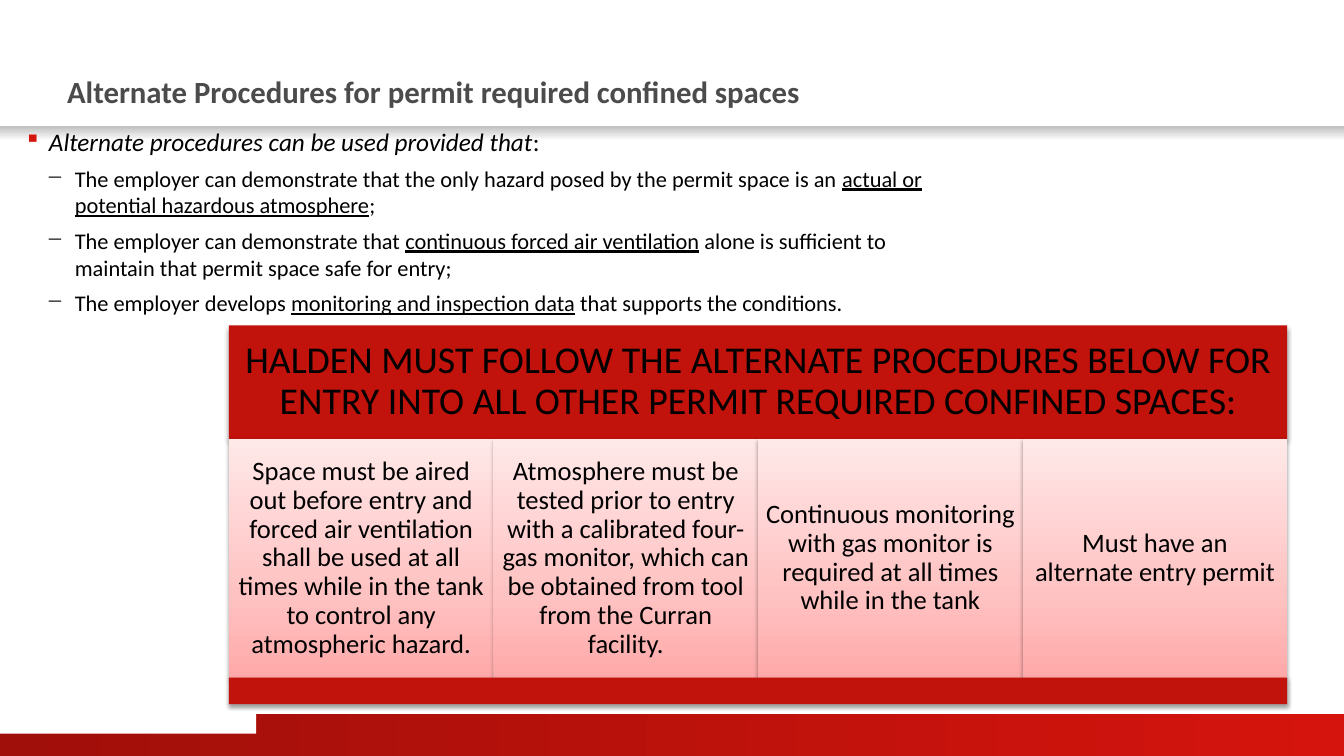
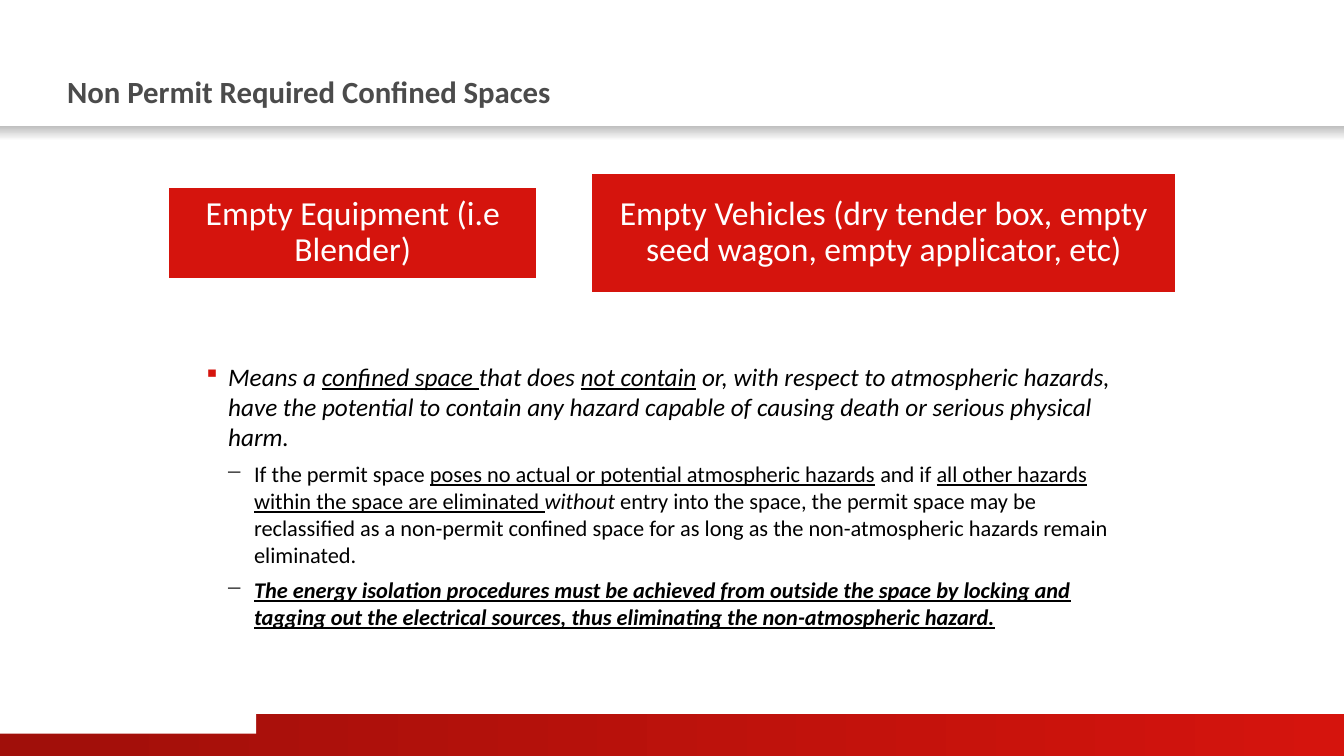
"""Build two slides on entry rules for confined spaces."""
from dataclasses import dataclass
from typing import Optional

from lxml.etree import SubElement as Sub
from pptx import Presentation
from pptx.dml.color import RGBColor as RGB
from pptx.enum.shapes import MSO_SHAPE as Form
from pptx.enum.text import MSO_ANCHOR as Anchor, PP_ALIGN as Align
from pptx.oxml.ns import qn
from pptx.util import Pt

FONT = "Calibri"
WIDE, HIGH = 960, 540
BLACK = RGB(0x00, 0x00, 0x00)
WHITE = RGB(0xFF, 0xFF, 0xFF)
GREY = RGB(0x4B, 0x4B, 0x4B)
SILVER = RGB(0xBE, 0xBE, 0xBE)
RED = RGB(0xD5, 0x14, 0x0D)
BRICK = RGB(0xC1, 0x12, 0x0C)
DARK = RGB(0xA0, 0x0F, 0x0A)
ROSE = RGB(0xFF, 0xA9, 0xA9)
PINK = RGB(0xFF, 0xC2, 0xC2)
BLUSH = RGB(0xFF, 0xE8, 0xE8)


@dataclass
class Area:
    x: float
    y: float
    w: float
    h: float


@dataclass
class Blend:
    stops: list[tuple[int, RGB]]
    angle: int


@dataclass
class Run:
    text: str
    style: str = ""


@dataclass
class Level:
    size: int
    left: float
    hang: float
    mark: str
    tint: RGB
    scale: int


@dataclass
class Item:
    level: int
    runs: list[Run]


@dataclass
class Label:
    text: str
    size: int
    color: RGB
    pad: float


LEVELS = [
    Level(18, 17.5, 17.5, "▪", RED, 90),
    Level(16, 36, 18.5, "–", GREY, 100),
]
FOOT = Blend([(0, DARK), (100, RED)], 0)
SHADE = Blend([(0, SILVER), (100, WHITE)], 90)
CELL = Blend([(0, ROSE), (35, PINK), (100, BLUSH)], 270)

RULES = [
    Item(0, [Run("Alternate procedures can be used provided that", "i"), Run(":")]),
    Item(1, [
        Run("The employer can demonstrate that the only hazard posed by the permit space is an "),
        Run("actual or potential hazardous atmosphere", "u"),
        Run(";"),
    ]),
    Item(1, [
        Run("The employer can demonstrate that "),
        Run("continuous forced air ventilation", "u"),
        Run(" alone is sufficient to maintain that permit space safe for entry;"),
    ]),
    Item(1, [
        Run("The employer develops "),
        Run("monitoring and inspection data", "u"),
        Run(" that supports the conditions."),
    ]),
]
BANNER = ("HALDEN MUST FOLLOW THE ALTERNATE PROCEDURES BELOW FOR ENTRY INTO "
          "ALL OTHER PERMIT REQUIRED CONFINED SPACES:")
STEPS = [
    "Space must be aired out before entry and forced air ventilation shall be used "
    "at all times while in the tank to control any atmospheric hazard.",
    "Atmosphere must be tested prior to entry with a calibrated four-gas monitor, "
    "which can be obtained from tool from the Curran facility.",
    "Continuous monitoring with gas monitor is required at all times while in the tank",
    "Must have an alternate entry permit",
]
MEANING = [
    Item(0, [
        Run("Means a ", "i"),
        Run("confined space ", "iu"),
        Run("that does ", "i"),
        Run("not contain", "iu"),
        Run(" or, with respect to atmospheric hazards, have the potential to contain "
            "any hazard capable of causing death or serious physical harm.", "i"),
    ]),
    Item(1, [
        Run("If the permit space "),
        Run("poses no actual or potential atmospheric hazards", "u"),
        Run(" and if "),
        Run("all other hazards within the space are eliminated ", "u"),
        Run("without", "i"),
        Run(" entry into the space, the permit space may be reclassified as a non-permit "
            "confined space for as long as the non-atmospheric hazards remain eliminated."),
    ]),
    Item(1, [
        Run("The energy isolation procedures must be achieved from outside the space by "
            "locking and tagging out the electrical sources, thus eliminating the "
            "non-atmospheric hazard.", "biu"),
    ]),
]
CASES = [
    (Area(120, 133, 264, 66.5), "Empty Equipment (i.e Blender)"),
    (Area(422, 123, 418.5, 86.5),
     "Empty Vehicles (dry tender box, empty seed wagon, empty applicator, etc)"),
]


def bounds(area: Area) -> list[int]:
    return [Pt(n) for n in (area.x, area.y, area.w, area.h)]


def set_frame(frame, anchor, pads: tuple) -> None:
    frame.word_wrap = True
    frame.vertical_anchor = anchor
    (frame.margin_left, frame.margin_top,
     frame.margin_right, frame.margin_bottom) = [Pt(n) for n in pads]


def add_run(par, run: Run, size: int, color: RGB) -> None:
    part = par.add_run()
    part.text = run.text
    font = part.font
    font.name, font.size = FONT, Pt(size)
    font.color.rgb = color
    font.bold, font.italic = "b" in run.style, "i" in run.style
    font.underline = "u" in run.style


def add_blend(props, blend: Blend) -> None:
    grad = props.makeelement(qn("a:gradFill"), {"rotWithShape": "1"})
    stops = Sub(grad, qn("a:gsLst"))
    for place, color in blend.stops:
        stop = Sub(stops, qn("a:gs"), pos=str(place * 1000))
        Sub(stop, qn("a:srgbClr"), val=str(color))
    Sub(grad, qn("a:lin"), ang=str(blend.angle * 60000), scaled="0")
    props.find(qn("a:prstGeom")).addnext(grad)


def add_shadow(props) -> None:
    cast = Sub(props.find(qn("a:effectLst")), qn("a:outerShdw"), blurRad=str(Pt(3.1)),
               dist=str(Pt(1.6)), dir="5400000", rotWithShape="0")
    tint = Sub(cast, qn("a:srgbClr"), val=str(BLACK))
    Sub(tint, qn("a:alpha"), val="38000")


def add_box(slide, area: Area, fill: RGB | Blend, label: Optional[Label] = None,
            edge: Optional[RGB] = None, raised: bool = False) -> None:
    box = slide.shapes.add_shape(Form.RECTANGLE, *bounds(area))
    box.shadow.inherit = False
    props = box.element.spPr
    if isinstance(fill, Blend):
        add_blend(props, fill)
    else:
        box.fill.solid()
        box.fill.fore_color.rgb = fill
    if edge is None:
        box.line.fill.background()
    else:
        box.line.color.rgb = edge
        box.line.width = Pt(2)
    if raised:
        add_shadow(props)
    if label:
        frame = box.text_frame
        set_frame(frame, Anchor.MIDDLE, (label.pad,) * 4)
        par = frame.paragraphs[0]
        par.alignment, par.line_spacing = Align.CENTER, 0.9
        add_run(par, Run(label.text), label.size, label.color)


def add_list(slide, area: Area, items: list[Item]) -> None:
    frame = slide.shapes.add_textbox(*bounds(area)).text_frame
    set_frame(frame, Anchor.TOP, (0, 0, 0, 0))
    for num, item in enumerate(items):
        par = frame.add_paragraph() if num else frame.paragraphs[0]
        level = LEVELS[item.level]
        par.level = item.level
        par.space_before = Pt(6 if num else 0)
        props = par._p.get_or_add_pPr()
        props.set("marL", str(Pt(level.left)))
        props.set("indent", str(-Pt(level.hang)))
        Sub(Sub(props, qn("a:buClr")), qn("a:srgbClr"), val=str(level.tint))
        Sub(props, qn("a:buSzPct"), val=str(level.scale * 1000))
        Sub(props, qn("a:buChar"), char=level.mark)
        for run in item.runs:
            add_run(par, run, level.size, BLACK)


def add_slide(deck, title: str):
    slide = deck.slides.add_slide(deck.slide_layouts[6])
    add_box(slide, Area(0, 510, WIDE, 30), FOOT)
    add_box(slide, Area(0, 488, 183, 36), WHITE)
    add_box(slide, Area(0, 90, WIDE, 10.5), SHADE)
    frame = slide.shapes.add_textbox(*bounds(Area(48, 18, 864, 72))).text_frame
    set_frame(frame, Anchor.BOTTOM, (0, 0, 0, 10.8))
    par = frame.paragraphs[0]
    par.line_spacing = 0.95
    add_run(par, Run(title, "b"), 22, GREY)
    return slide


def add_panel(slide, area: Area, head: float, foot: float) -> None:
    add_box(slide, Area(area.x, area.y, area.w, head), BRICK,
            Label(BANNER, 27, BLACK, 8), raised=True)
    wide, tall = area.w / len(STEPS), area.h - head - foot
    for num, step in enumerate(STEPS):
        cell = Area(area.x + num * wide, area.y + head, wide, tall)
        add_box(slide, cell, CELL, Label(step, 19, BLACK, 5.5), raised=True)
    base = Area(area.x, area.y + area.h - foot, area.w, foot)
    add_box(slide, base, BRICK, raised=True)


def main() -> None:
    deck = Presentation()
    deck.slide_width, deck.slide_height = Pt(WIDE), Pt(HIGH)

    slide = add_slide(deck, "Alternate Procedures for permit required confined spaces")
    add_list(slide, Area(17.5, 90, 669, 140), RULES)
    add_panel(slide, Area(163.5, 232.5, 756, 270.5), 81, 19)

    slide = add_slide(deck, "Non Permit Required Confined Spaces")
    add_list(slide, Area(145.5, 258, 669, 200), MEANING)
    for area, text in CASES:
        add_box(slide, area, RED, Label(text, 24, WHITE, 7), edge=WHITE)

    deck.save("out.pptx")


if __name__ == "__main__":
    main()
